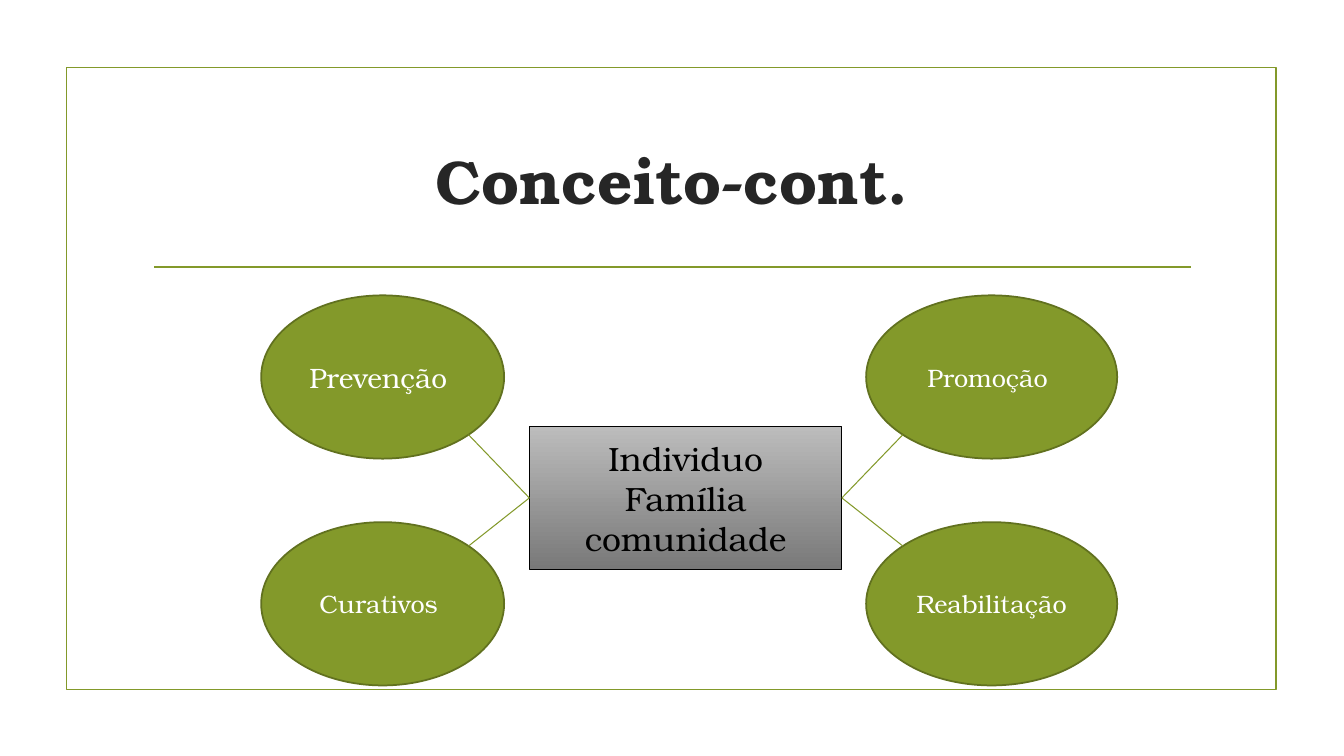
from dataclasses import dataclass
from math import sqrt
from lxml import etree
from pptx import Presentation
from pptx import util as u
from pptx.dml.color import RGBColor
from pptx.enum import shapes, text
from pptx.oxml.ns import qn


@dataclass(frozen=True)
class Theme:
    font: str = "TeX Gyre Bonum"
    green: str = "83992A"
    edge: str = "61711F"
    ink: str = "262626"
    black: str = "000000"
    white: str = "FFFFFF"
    light: str = "BCBCBC"
    dark: str = "797979"
    title: int = 44
    core: int = 24
    large: int = 20
    small: int = 18
    thick: float = 1.25
    thin: float = 0.75


THEME = Theme()
KIND = shapes.MSO_SHAPE


def px(n):
    return u.Emu(round(n * 9144))


def rgb(code):
    return RGBColor.from_string(code)


def stroke(item, color, width):
    item.line.color.rgb = rgb(color)
    item.line.width = u.Pt(width)


def write(item, lines, size, color, bold=False):
    frame = item.text_frame
    frame.word_wrap = True
    frame.vertical_anchor = text.MSO_ANCHOR.MIDDLE
    frame.text = "\n".join(lines)
    for para in frame.paragraphs:
        para.alignment = text.PP_ALIGN.CENTER
        font = para.font
        font.name, font.size, font.bold = THEME.font, u.Pt(size), bold
        font.color.rgb = rgb(color)


def shape(slide, kind, box, color, width):
    item = slide.shapes.add_shape(kind, *map(px, box))
    item.shadow.inherit = False
    stroke(item, color, width)
    return item


def link(slide, start, end, width):
    line = slide.shapes.add_connector(
        shapes.MSO_CONNECTOR.STRAIGHT, *map(px, (*start, *end)))
    stroke(line, THEME.green, width)
    etree.SubElement(line._element.spPr, qn("a:effectLst"))


def border(slide, box):
    item = shape(slide, KIND.RECTANGLE, box, THEME.green, THEME.thick)
    item.fill.background()


def header(slide, box, words):
    x, y, w, h = box
    rule = y + h + 15
    link(slide, (x + 11, rule), (x + w - 11, rule), THEME.thick)
    item = slide.shapes.add_textbox(*map(px, box))
    write(item, [words], THEME.title, THEME.ink, True)


def core(slide, box, lines):
    item = shape(slide, KIND.RECTANGLE, box, THEME.black, THEME.thin)
    item.fill.gradient()
    item.fill.gradient_angle = 270
    for stop, color in zip(item.fill.gradient_stops, (THEME.light, THEME.dark)):
        stop.color.rgb = rgb(color)
    write(item, lines, THEME.core, THEME.black)


def oval(slide, box, words, size):
    item = shape(slide, KIND.OVAL, box, THEME.edge, THEME.thick)
    item.fill.solid()
    item.fill.fore_color.rgb = rgb(THEME.green)
    write(item, [words], size, THEME.white)


def diagram(slide, box, lines, sides):
    x, y, w, h = box
    mid = (x + 266, y + 130, 310, 142)
    core(slide, mid, lines)
    hub = mid[1] + mid[3] / 2
    tall = 162
    for side, (wide, labels) in enumerate(sides):
        left = x + side * (w - wide)
        port = mid[0] + side * mid[2]
        for row, (words, size) in enumerate(labels):
            top = y + row * (h - tall)
            oval(slide, (left, top, wide, tall), words, size)
            reach = sqrt(0.5) / 2
            tip = (left + wide * (0.5 + reach * (1 - 2 * side)),
                   top + tall * (0.5 + reach * (1 - 2 * row)))
            link(slide, tip, (port, hub), THEME.thin)


def main():
    deck = Presentation()
    deck.slide_width, deck.slide_height = px(1333), px(750)
    slide = deck.slides.add_slide(deck.slide_layouts[6])
    border(slide, (66, 67, 1200, 617))
    header(slide, (142, 107, 1050, 143), "Conceito-cont.")
    diagram(slide, (259, 293, 849, 387), ["Individuo", "Família", "comunidade"], [
        (241, [("Prevenção ", THEME.large), ("Curativos ", THEME.small)]),
        (249, [("Promoção ", THEME.small), ("Reabilitação ", THEME.small)]),
    ])
    deck.save("out.pptx")


if __name__ == "__main__":
    main()
